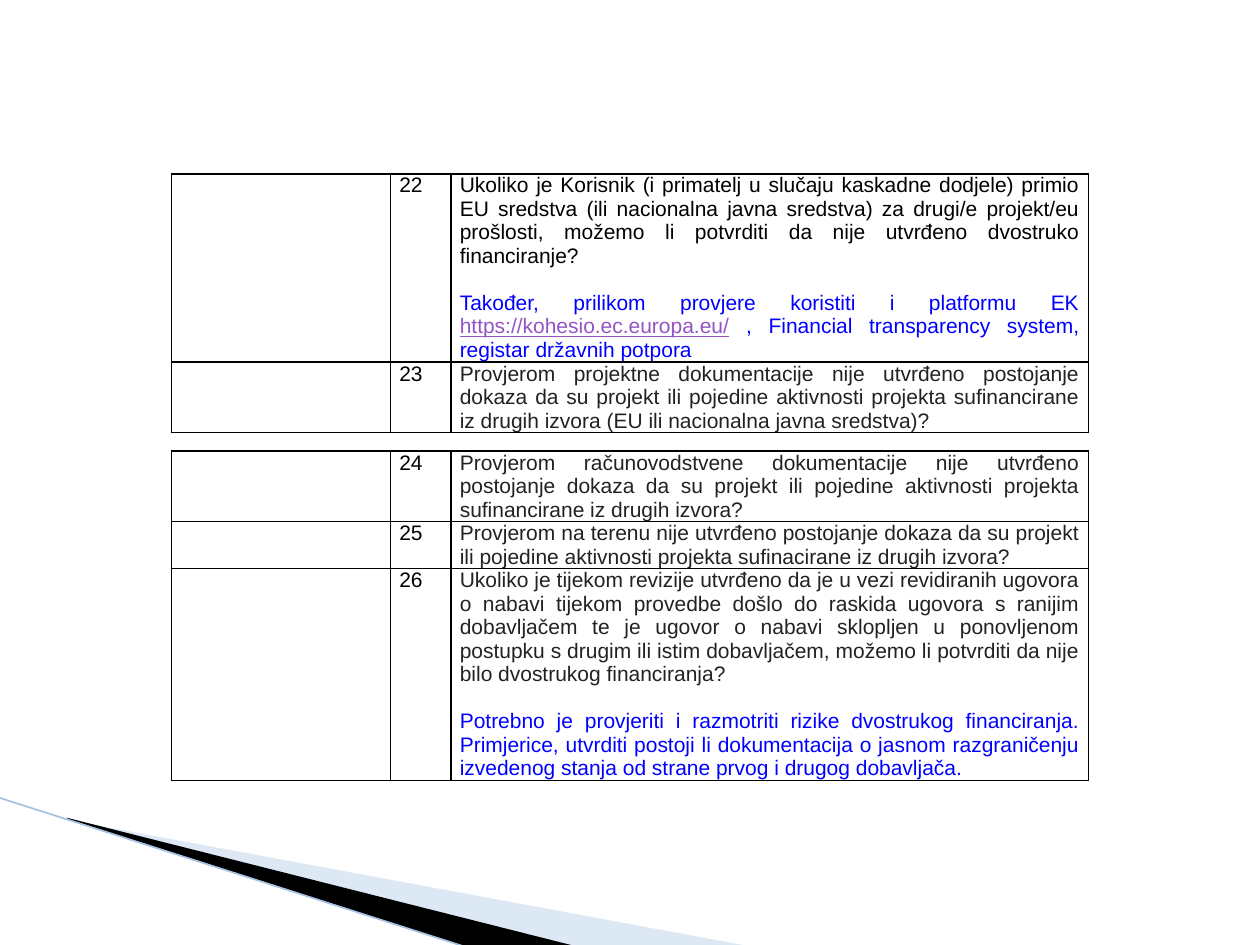
import pptx
import pptx.util
import pptx.dml.color
import pptx.enum.shapes
import pptx.enum.text
import pptx.oxml
import pptx.oxml.ns
from lxml import etree

Inches, Pt = pptx.util.Inches, pptx.util.Pt
qn = pptx.oxml.ns.qn

theme = {
    "font": "Arial", "size": 12, "pitch": 13.4, "rule": 1, "edge": 0.95,
    "black": "000000", "grey": "222222", "blue": "0000FF", "link": "9454C3",
    "pale": "ABC6E6", "line": "A4C1E3",
}

tables = [
    (1.38, [
        ("22", 8, [
            [("Ukoliko je Korisnik (i primatelj u slučaju kaskadne dodjele) primio EU sredstva (ili nacionalna javna sredstva) za drugi/e projekt/eu prošlosti, možemo li potvrditi da nije utvrđeno dvostruko financiranje?", "black")],
            [("Također, prilikom provjere koristiti i platformu EK ", "blue"),
             ("https://kohesio.ec.europa.eu/", "link"),
             (" , Financial transparency system, registar državnih potpora", "blue")],
        ]),
        ("23", 3, [
            [("Provjerom projektne dokumentacije nije utvrđeno postojanje dokaza da su projekt ili pojedine aktivnosti projekta sufinancirane iz drugih izvora (EU ili nacionalna javna sredstva)?", "grey")],
        ]),
    ]),
    (3.58, [
        ("24", 3, [
            [("Provjerom računovodstvene dokumentacije nije utvrđeno postojanje dokaza da su projekt ili pojedine aktivnosti projekta sufinancirane iz drugih izvora?", "grey")],
        ]),
        ("25", 2, [
            [("Provjerom na terenu nije utvrđeno postojanje dokaza da su projekt ili pojedine aktivnosti projekta sufinacirane iz drugih izvora?", "grey")],
        ]),
        ("26", 9, [
            [("Ukoliko je tijekom revizije utvrđeno da je u vezi revidiranih ugovora o nabavi tijekom provedbe došlo do raskida ugovora s ranijim dobavljačem te je ugovor o nabavi sklopljen u ponovljenom postupku s drugim ili istim dobavljačem, možemo li potvrditi da nije bilo dvostrukog financiranja?", "grey")],
            [("Potrebno je provjeriti i razmotriti rizike dvostrukog financiranja. Primjerice, utvrditi postoji li dokumentacija o jasnom razgraničenju izvedenog stanja od strane prvog i drugog dobavljača.", "blue")],
        ]),
    ]),
]
left = 1.36
cols = [1.74, 0.48, 5.06]

wedges = [
    ([(0.55, 6.51), (5.95, 7.51), (4.56, 7.51), (0.55, 6.5)], "pale", 40),
    ([(0.53, 6.49), (4.57, 7.51), (3.72, 7.52), (0.54, 6.5)], "black", 100),
]
edge = (-0.01, 6.33, 3.71, 7.52)


def tint(name):
    return pptx.dml.color.RGBColor.from_string(theme[name])


def wedge(slide, points, color, alpha):
    spots = [(Inches(x), Inches(y)) for x, y in points]
    pen = slide.shapes.build_freeform(*spots[0], scale=1.0)
    pen.add_line_segments(spots[1:], close=True)
    shape = pen.convert_to_shape()
    shape.shadow.inherit = False
    shape.fill.solid()
    shape.fill.fore_color.rgb = tint(color)
    shape.line.fill.background()
    if alpha < 100:
        fill = shape.fill._xPr.find(qn("a:solidFill"))
        etree.SubElement(fill[0], qn("a:alpha"), val=str(alpha * 1000))


def border(cell):
    props = cell._tc.get_or_add_tcPr()
    for side in ("lnL", "lnR", "lnT", "lnB"):
        line = etree.SubElement(props, qn("a:" + side), w=str(Pt(theme["rule"])))
        fill = etree.SubElement(line, qn("a:solidFill"))
        etree.SubElement(fill, qn("a:srgbClr"), val=theme["black"])


def write(cell, paras, align):
    border(cell)
    cell.fill.background()
    cell.margin_left = cell.margin_right = Inches(0.07)
    cell.margin_top = cell.margin_bottom = 0
    frame = cell.text_frame
    for i, runs in enumerate(paras):
        para = frame.add_paragraph() if i else frame.paragraphs[0]
        para.alignment = align
        if i:
            para.space_before = Pt(theme["pitch"])
        for text, color in runs:
            run = para.add_run()
            run.text = text
            run.font.name = theme["font"]
            run.font.size = Pt(theme["size"])
            run.font.color.rgb = tint(color)
            if color == "link":
                run.font.underline = True


def grid(slide, top, rows):
    tall = sum(count for _, count, _ in rows) * theme["pitch"]
    table = slide.shapes.add_table(
        len(rows), len(cols), Inches(left), Inches(top),
        Inches(sum(cols)), Pt(tall)).table
    table.first_row = table.horz_banding = False
    for col, width in zip(table.columns, cols):
        col.width = Inches(width)
    kind = pptx.enum.text.PP_ALIGN
    for row, (number, count, paras) in zip(table.rows, rows):
        row.height = Pt(count * theme["pitch"])
        write(row.cells[0], [], kind.LEFT)
        write(row.cells[1], [[(number, "black")]], kind.LEFT)
        write(row.cells[2], paras, kind.JUSTIFY)


def main():
    deck = pptx.Presentation()
    deck.slide_width, deck.slide_height = Inches(10), Inches(7.5)
    slide = deck.slides.add_slide(deck.slide_layouts[6])
    for item in wedges:
        wedge(slide, *item)
    line = slide.shapes.add_connector(
        pptx.enum.shapes.MSO_CONNECTOR.STRAIGHT, *map(Inches, edge))
    line.line.color.rgb = tint("line")
    line.line.width = Pt(theme["edge"])
    etree.SubElement(line._element.spPr, qn("a:effectLst"))
    for top, rows in tables:
        grid(slide, top, rows)
    deck.save("out.pptx")


if __name__ == "__main__":
    main()
